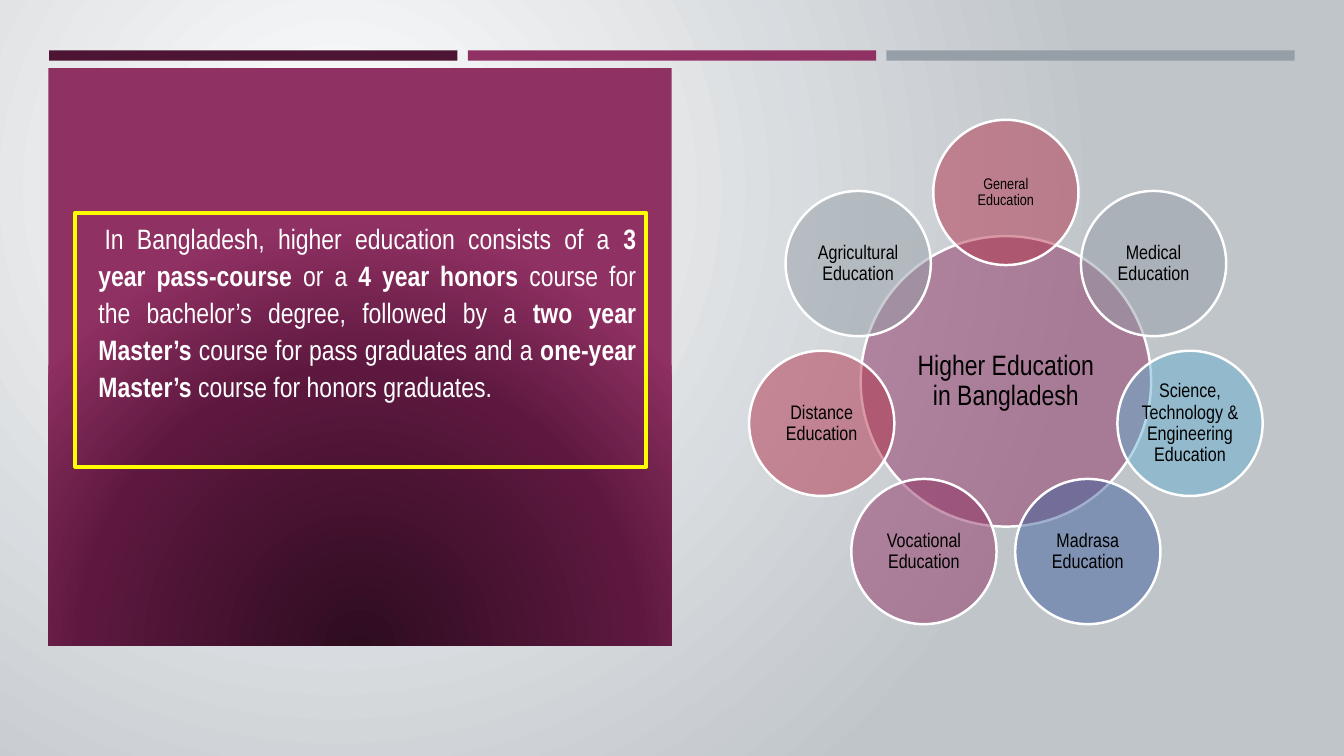
from dataclasses import dataclass
from math import cos, pi, sin
from typing import Any, NamedTuple

from lxml.etree import SubElement
from pptx import Presentation
from pptx.dml.color import RGBColor
from pptx.enum.shapes import MSO_SHAPE
from pptx.enum.text import MSO_ANCHOR, PP_ALIGN
from pptx.oxml.ns import qn
from pptx.util import Cm, Pt


@dataclass(frozen=True)
class Theme:
    font: str = "Arial Narrow"
    white: str = "FFFFFF"
    black: str = "000000"
    mist: str = "C0C5CA"
    wine: str = "4D1434"
    plum: str = "903163"
    grey: str = "969FA7"
    red: str = "B2324B"
    sky: str = "66B1CE"
    blue: str = "40619D"
    yellow: str = "FFFF00"
    panel_core: str = "2E0C1F"
    panel_middle: str = "5D183F"
    large: int = 20
    medium: int = 14
    small: int = 11


class Frame(NamedTuple):
    left: float
    top: float
    width: float
    height: float


class Circle(NamedTuple):
    label: str
    color: str
    size: int
    inset: float = 0.05


class Span(NamedTuple):
    text: str
    bold: bool = False


class Stop(NamedTuple):
    percent: int
    color: str


THEME = Theme()

# Bars along the top edge
BAR_COLORS = (THEME.wine, THEME.plum, THEME.grey)
BAR = Frame(1.24, 1.27, 10.29, 0.26)
BAR_PITCH = 10.55

# Left panel and its statement
PANEL = Frame(1.22, 1.71, 15.71, 14.57)
STATEMENT = Frame(1.9, 5.36, 14.38, 6.4)
SPANS = (
    Span("In Bangladesh, higher education consists of a "),
    Span("3 year pass-course ", True),
    Span("or a "),
    Span("4 year honors ", True),
    Span("course for the bachelor’s degree, followed by a "),
    Span("two year Master’s ", True),
    Span("course for pass graduates and a "),
    Span("one-year Master’s", True),
    Span(" course for honors graduates."),
)

# Radial diagram: satellites run clockwise from the top
HUB_X, HUB_Y, ORBIT = 25.35, 9.61, 4.76
HUB_DIAMETER, SATELLITE_DIAMETER = 7.32, 3.66
HUB = Circle("Higher Education in Bangladesh", THEME.plum, THEME.large, 0.12)
SATELLITES = (
    Circle("General Education", THEME.red, THEME.small),
    Circle("Medical Education", THEME.grey, THEME.medium),
    Circle("Science, Technology & Engineering Education", THEME.sky, THEME.medium),
    Circle("Madrasa Education", THEME.blue, THEME.medium),
    Circle("Vocational Education", THEME.plum, THEME.medium),
    Circle("Distance Education", THEME.red, THEME.medium),
    Circle("Agricultural Education", THEME.grey, THEME.medium),
)


def apply(target: Any, values: dict[str, Any]) -> None:
    for name, value in values.items():
        setattr(target, name, value)


def place(frame: Frame) -> list[int]:
    return [Cm(length) for length in frame]


def add_rectangle(page: Any, frame: Frame) -> Any:
    shape = page.shapes.add_shape(MSO_SHAPE.RECTANGLE, *place(frame))
    shape.shadow.inherit = False
    shape.line.fill.background()
    return shape


def set_radial(owner: Any, fill: Any, stops: list[Stop], focus: dict[str, int]) -> None:
    """Fill with a circular gradient around a focus given in percent insets."""
    fill.gradient()
    gradient = owner.find(".//" + qn("a:gradFill"))
    for child in list(gradient):
        gradient.remove(child)
    stop_list = SubElement(gradient, qn("a:gsLst"))
    for stop in stops:
        mark = SubElement(stop_list, qn("a:gs"), pos=str(stop.percent * 1000))
        SubElement(mark, qn("a:srgbClr"), val=stop.color)
    circle = SubElement(gradient, qn("a:path"), path="circle")
    insets = {side: str(percent * 1000) for side, percent in focus.items()}
    SubElement(circle, qn("a:fillToRect"), **insets)


def add_span(para: Any, text: str, size: int, color: str, bold: bool = False) -> None:
    span = para.add_run()
    span.text = text
    apply(span.font, {"name": THEME.font, "size": Pt(size), "bold": bold})
    span.font.color.rgb = RGBColor.from_string(color)


def add_circle(page: Any, circle: Circle, x: float, y: float, diameter: float) -> None:
    frame = Frame(x - diameter / 2, y - diameter / 2, diameter, diameter)
    shape = page.shapes.add_shape(MSO_SHAPE.OVAL, *place(frame))
    shape.shadow.inherit = False
    shape.fill.solid()
    shape.fill.fore_color.rgb = RGBColor.from_string(circle.color)
    tint = shape.element.find(".//" + qn("a:solidFill") + "/" + qn("a:srgbClr"))
    SubElement(tint, qn("a:alpha"), val="50000")
    shape.line.color.rgb = RGBColor.from_string(THEME.white)
    shape.line.width = Pt(1.75)
    sides = ("margin_left", "margin_right", "margin_top", "margin_bottom")
    apply(shape.text_frame, dict.fromkeys(sides, Cm(circle.inset)))
    apply(shape.text_frame, {"word_wrap": True, "vertical_anchor": MSO_ANCHOR.MIDDLE})
    para = shape.text_frame.paragraphs[0]
    apply(para, {"alignment": PP_ALIGN.CENTER, "line_spacing": 0.9})
    add_span(para, circle.label, circle.size, THEME.black)


def add_statement(page: Any) -> None:
    box = page.shapes.add_textbox(*place(STATEMENT))
    box.line.color.rgb = RGBColor.from_string(THEME.yellow)
    box.line.width = Pt(3)
    apply(box.text_frame, {"word_wrap": True, "margin_top": Cm(0.15)})
    para = box.text_frame.paragraphs[0]
    apply(para, {"alignment": PP_ALIGN.JUSTIFY, "line_spacing": 1.1})
    # Hanging square bullet in the panel colour
    layout = box.element.find(".//" + qn("a:pPr"))
    layout.set("marL", str(Cm(0.33)))
    layout.set("indent", str(Cm(-0.84)))
    bullet_color = SubElement(layout, qn("a:buClr"))
    SubElement(bullet_color, qn("a:srgbClr"), val=THEME.plum)
    SubElement(layout, qn("a:buSzPct"), val="92000")
    SubElement(layout, qn("a:buChar"), char="■")
    for span in SPANS:
        add_span(para, span.text, THEME.large, THEME.white, span.bold)


def main() -> None:
    deck = Presentation()
    apply(deck, {"slide_width": Cm(33.87), "slide_height": Cm(19.05)})
    page = deck.slides.add_slide(deck.slide_layouts[6])

    # Background
    set_radial(page.element, page.background.fill,
               [Stop(0, THEME.white), Stop(100, THEME.mist)],
               {"l": 50, "t": 50, "r": 100, "b": 100})

    # Top bars
    for index, color in enumerate(BAR_COLORS):
        bar = add_rectangle(page, BAR._replace(left=BAR.left + index * BAR_PITCH))
        bar.fill.solid()
        bar.fill.fore_color.rgb = RGBColor.from_string(color)

    # Left panel
    panel = add_rectangle(page, PANEL)
    set_radial(panel.element, panel.fill,
               [Stop(0, THEME.panel_core), Stop(65, THEME.panel_middle),
                Stop(100, THEME.plum)],
               {"l": 50, "t": 130, "r": 50, "b": -30})

    # Hub and satellites
    add_circle(page, HUB, HUB_X, HUB_Y, HUB_DIAMETER)
    for index, satellite in enumerate(SATELLITES):
        angle = 2 * pi * index / len(SATELLITES)
        add_circle(page, satellite, HUB_X + ORBIT * sin(angle),
                   HUB_Y - ORBIT * cos(angle), SATELLITE_DIAMETER)

    add_statement(page)
    deck.save("out.pptx")


if __name__ == "__main__":
    main()
